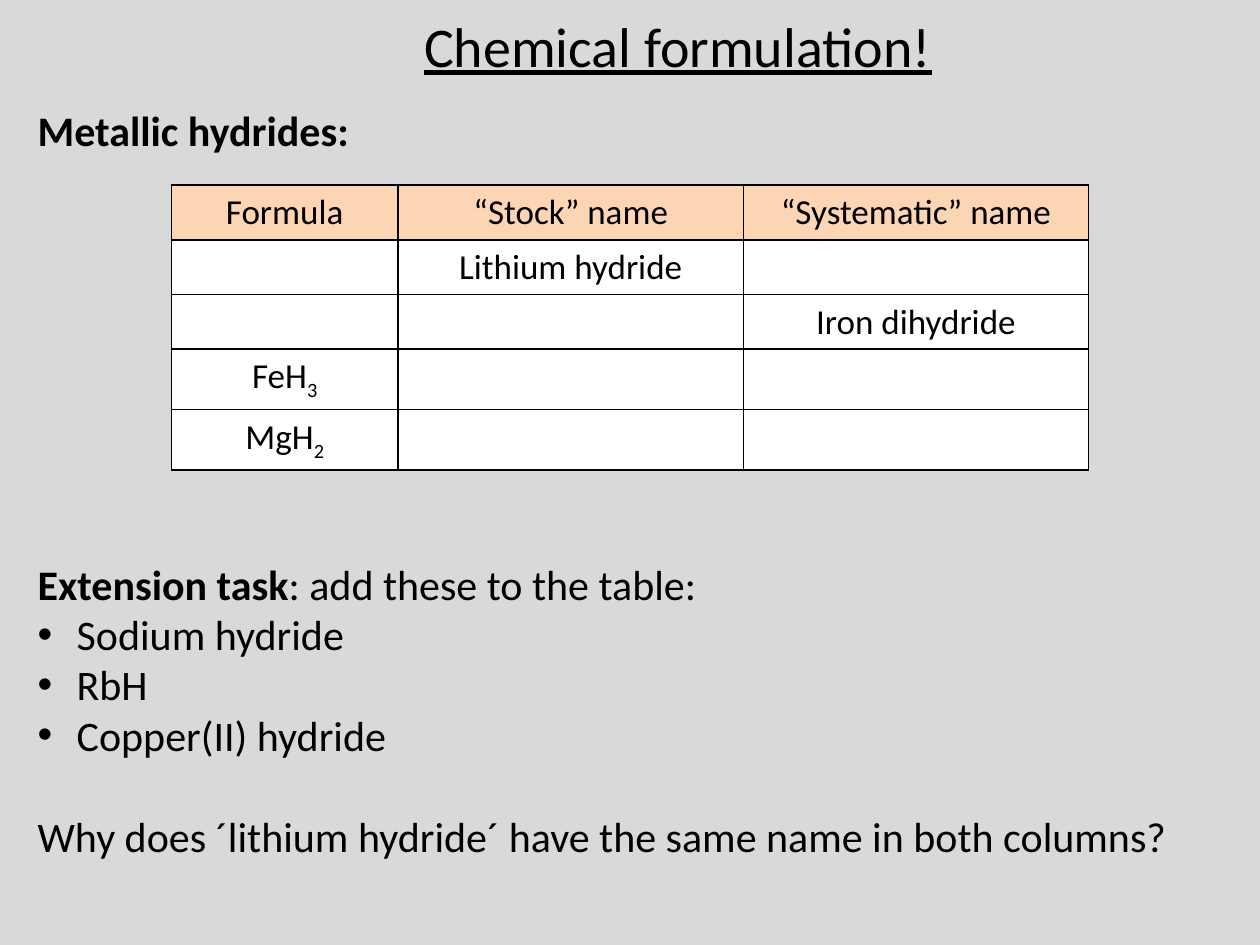
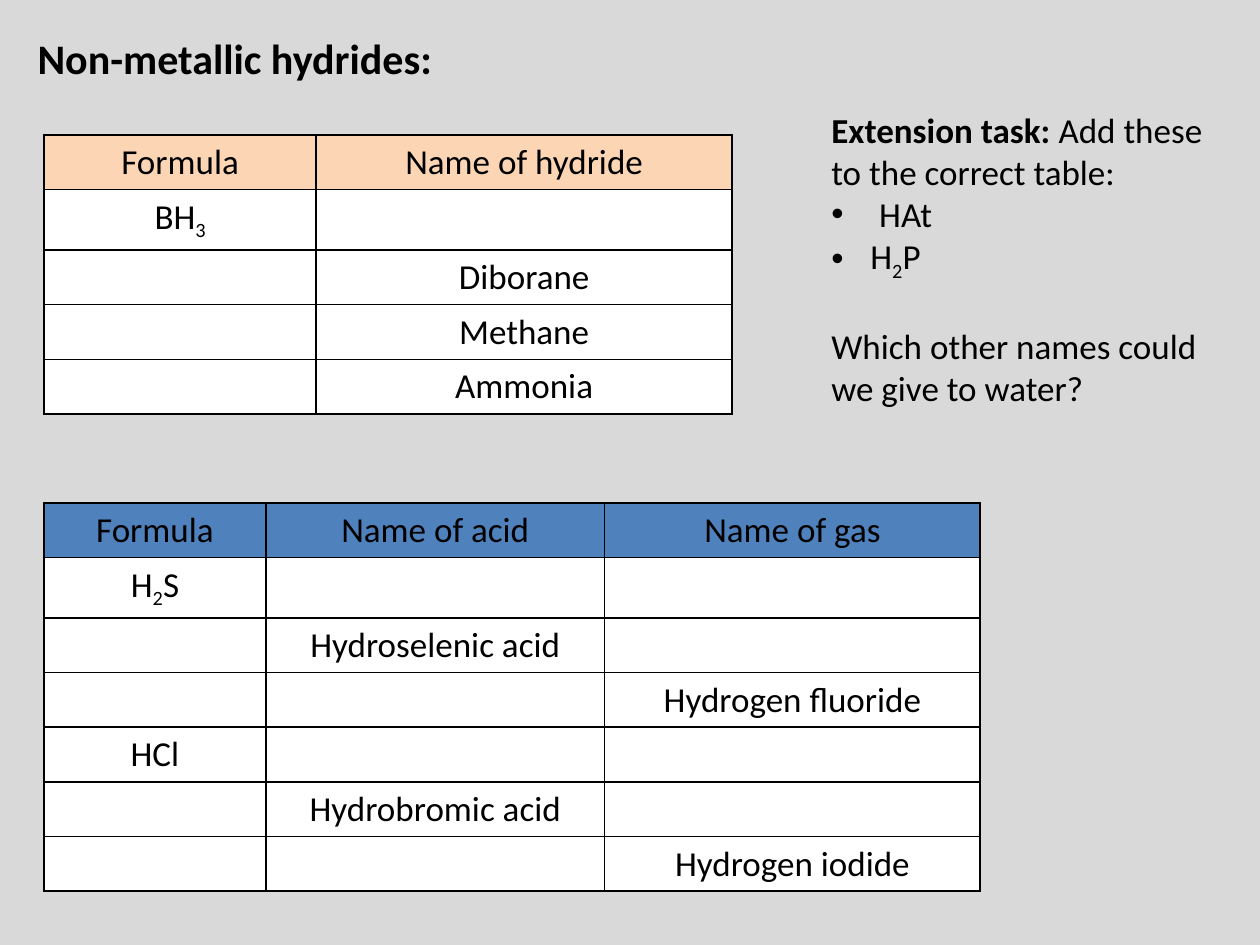
from itertools import groupby

from lxml.etree import SubElement
from pptx import Presentation
from pptx.dml.color import RGBColor as Rgb
from pptx.enum.text import MSO_ANCHOR as Anchor, MSO_AUTO_SIZE as AutoSize, PP_ALIGN as Align
from pptx.oxml.ns import qn
from pptx.util import Inches, Pt

COLORS = {"page": "D9D9D9", "ink": "000000", "peach": "FCD5B5",
          "blue": "4F81BD", "cell": "FFFFFF"}
FONT = "Calibri"
TITLE_ONLY, BLANK = 5, 6
LEFT = 0.2                      # left edge of headings and notes
ROW, FORMULA_ROW = 0.43, 0.48   # a row with subscripts is taller
LINE = 1.22                     # line height of the font


def rgb(name):
    return Rgb.from_string(COLORS[name])


def write(paragraph, text, **formats):
    """Add text to a paragraph, with its digits as subscripts."""
    for is_index, letters in groupby(text, str.isdigit):
        run = paragraph.add_run()
        run.text = "".join(letters)
        for name, value in {"name": FONT, **formats}.items():
            setattr(run.font, name, value)
        run.font.color.rgb = rgb("ink")
        if is_index:
            run.font._element.set("baseline", "-25000")


def add_bullet(paragraph, indent):
    properties = paragraph._p.get_or_add_pPr()
    properties.set("marL", str(Inches(indent)))
    properties.set("indent", str(-Inches(indent)))
    SubElement(properties, qn("a:buFont"), typeface="Arial")
    SubElement(properties, qn("a:buChar"), char="•")


def add_text_frame(slide, box):
    frame = slide.shapes.add_textbox(*map(Inches, box)).text_frame
    frame.word_wrap = True
    frame.auto_size = AutoSize.SHAPE_TO_FIT_TEXT
    return frame


def add_title(slide, box, text):
    title = slide.shapes.title
    title.left, title.top, title.width, title.height = map(Inches, box)
    frame = title.text_frame
    frame.vertical_anchor = Anchor.MIDDLE
    frame.paragraphs[0].alignment = Align.CENTER
    write(frame.paragraphs[0], text, size=Pt(32), underline=True)


def add_heading(slide, box, text):
    frame = add_text_frame(slide, box)
    write(frame.paragraphs[0], text, size=Pt(24), bold=True)


def add_extension(slide, box, size, lead, task, items, question):
    """Task with a bold lead, its bulleted items and a closing question."""
    frame = add_text_frame(slide, box)
    opening = frame.paragraphs[0]
    write(opening, lead, size=Pt(size), bold=True)
    write(opening, task, size=Pt(size))
    for item, indent in items:
        bullet = frame.add_paragraph()
        add_bullet(bullet, indent)
        write(bullet, item, size=Pt(size))
    closing = frame.add_paragraph()
    closing.space_before = Pt(round(size * LINE, 1))
    write(closing, question, size=Pt(size))


def style_cell(cell, text, fill):
    properties = cell._tc.get_or_add_tcPr()
    for side in ("lnL", "lnR", "lnT", "lnB"):
        border = SubElement(properties, qn(f"a:{side}"), w=str(Pt(1)))
        paint = SubElement(border, qn("a:solidFill"))
        SubElement(paint, qn("a:srgbClr"), val=COLORS["ink"])
    cell.fill.solid()
    cell.fill.fore_color.rgb = rgb(fill)
    paragraph = cell.text_frame.paragraphs[0]
    paragraph.alignment = Align.CENTER
    write(paragraph, text, size=Pt(20))


def add_naming_table(slide, left, top, widths, header_fill, rows):
    heights = [FORMULA_ROW if any(map(str.isdigit, "".join(row))) else ROW
               for row in rows]
    box = left, top, sum(widths), sum(heights)
    table = slide.shapes.add_table(len(rows), len(widths), *map(Inches, box)).table
    table.first_row = table.horz_banding = False
    for column, width in zip(table.columns, widths):
        column.width = Inches(width)
    for index, (row, height) in enumerate(zip(rows, heights)):
        table.rows[index].height = Inches(height)
        for cell, text in zip(table.rows[index].cells, row):
            style_cell(cell, text, "cell" if index else header_fill)


def build_metallic(slide):
    add_title(slide, (0.88, -0.03, 9, 0.77), "Chemical formulation!")
    add_heading(slide, (LEFT, 0.78, 3.39, 0.5), "Metallic hydrides:")
    add_naming_table(slide, 1.36, 1.47, (1.8, 2.74, 2.74), "peach", [
        ("Formula", "“Stock” name", "“Systematic” name"),
        ("", "Lithium hydride", ""),
        ("", "", "Iron dihydride"),
        ("FeH3", "", ""),
        ("MgH2", "", ""),
    ])
    add_extension(
        slide, (LEFT, 4.38, 9.61, 2.52), 24,
        "Extension task", ": add these to the table:",
        [("Sodium hydride", 0.31), ("RbH", 0.31), ("Copper(II) hydride", 0.31)],
        "Why does ´lithium hydride´ have the same name in both columns?")


def build_non_metallic(slide):
    table_left = 0.35
    # Acids
    add_naming_table(slide, table_left, 3.99, (1.76, 2.69, 2.98), "blue", [
        ("Formula", "Name of acid", "Name of gas"),
        ("H2S", "", ""),
        ("", "Hydroselenic acid", ""),
        ("", "", "Hydrogen fluoride"),
        ("HCl", "", ""),
        ("", "Hydrobromic acid", ""),
        ("", "", "Hydrogen iodide"),
    ])
    add_heading(slide, (LEFT, 0.21, 5.28, 0.5), "Non-metallic hydrides:")
    # Hydrides
    add_naming_table(slide, table_left, 1.07, (2.16, 3.3), "peach", [
        ("Formula", "Name of hydride"),
        ("BH3", ""),
        ("", "Diborane"),
        ("", "Methane"),
        ("", "Ammonia"),
    ])
    add_extension(
        slide, (6.5, 0.81, 3.23, 2.46), 20,
        "Extension task: ", "Add these to the correct table:",
        [("HAt", 0.38), ("H2P", 0.31)],
        "Which other names could we give to water?")


def main():
    deck = Presentation()
    deck.slide_width, deck.slide_height = Inches(10), Inches(7.5)
    page = deck.slide_master.background.fill
    page.solid()
    page.fore_color.rgb = rgb("page")
    for layout, build in ((TITLE_ONLY, build_metallic), (BLANK, build_non_metallic)):
        build(deck.slides.add_slide(deck.slide_layouts[layout]))
    deck.save("out.pptx")


if __name__ == "__main__":
    main()
